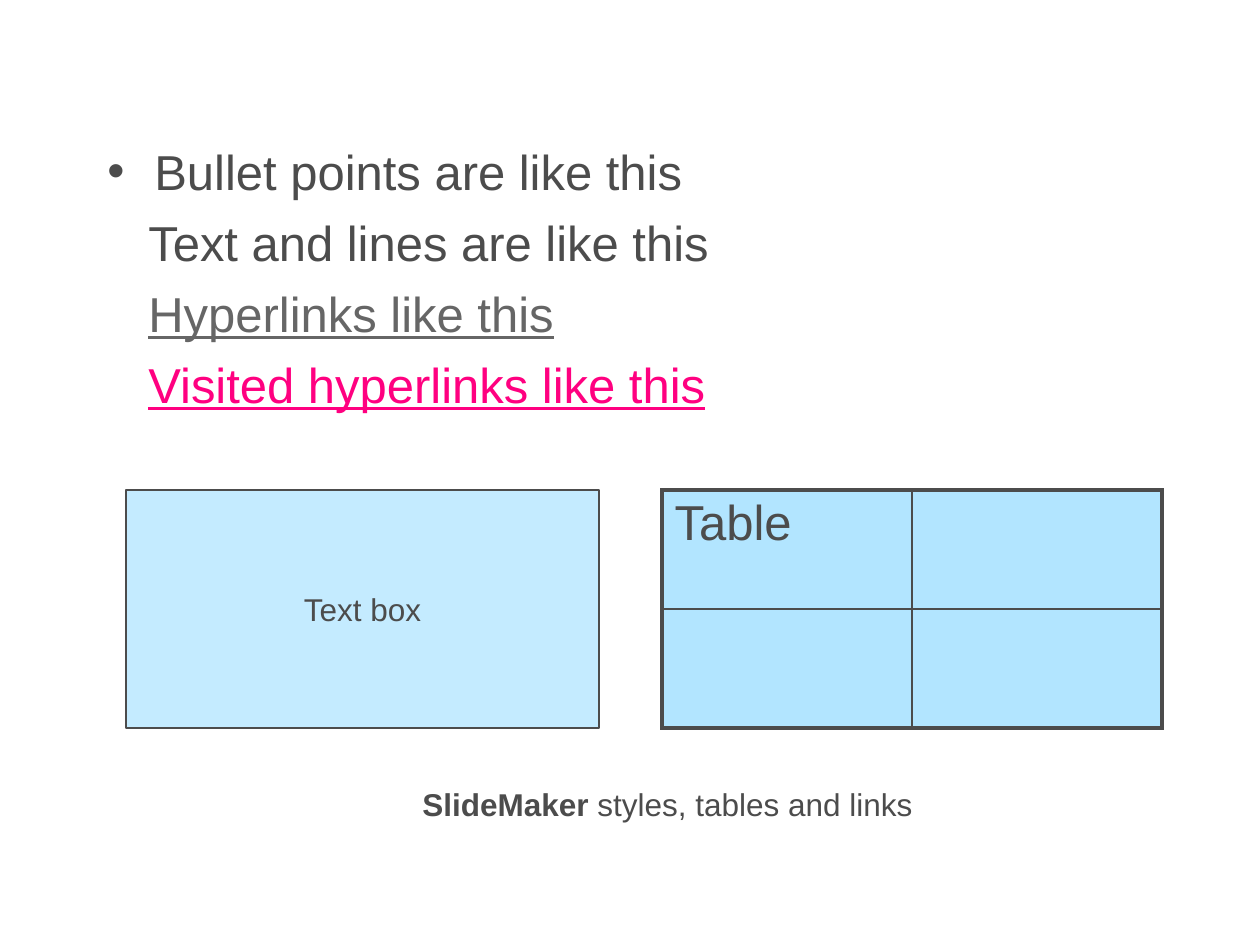
from pptx import Presentation, util as u
from pptx.dml import color
from pptx.enum import shapes, text
from pptx.oxml import xmlchemy, ns
from lxml import etree

COLORS = {"ink": "4C4C4C", "link": "666666", "visited": "FF0080", "panel": "66CCFF"}
EMU_PER_PX = 914400 / 126


def px(*lengths):
    return [u.Emu(round(length * EMU_PER_PX)) for length in lengths]


def set_fill(item, percent):
    item.fill.solid()
    item.fill.fore_color.rgb = color.RGBColor.from_string(COLORS["panel"])
    rgb = item.fill._xPr.find(".//" + ns.qn("a:srgbClr"))
    etree.SubElement(rgb, ns.qn("a:alpha"), val=str(percent * 1000))


presentation = Presentation()
presentation.slide_width, presentation.slide_height = px(1260, 945)
slide = presentation.slides.add_slide(presentation.slide_layouts[6])
ink = color.RGBColor.from_string(COLORS["ink"])

samples = [
    ("Bullet points are like this", "ink", False),
    ("Text and lines are like this", "ink", False),
    ("Hyperlinks like this", "link", True),
    ("Visited hyperlinks like this", "visited", True),
]
body = slide.shapes.add_textbox(*px(95, 135, 683, 506)).text_frame
body.word_wrap = True
for index, (words, name, underline) in enumerate(samples):
    paragraph = body.paragraphs[0] if index == 0 else body.add_paragraph()
    paragraph.text = words
    properties = paragraph._p.get_or_add_pPr()
    margin, indent = px(41, 0) if index else px(47, -47)
    properties.set("marL", str(margin))
    properties.set("indent", str(indent))
    if index:
        etree.SubElement(properties, ns.qn("a:buNone"))
        paragraph.space_before = u.Pt(7)
    else:
        etree.SubElement(properties, ns.qn("a:buFont"), typeface="Arial")
        etree.SubElement(properties, ns.qn("a:buChar"), char="•")
    paragraph.font.name = "Arial"
    paragraph.font.size = u.Pt(28)
    paragraph.font.underline = underline
    paragraph.font.color.rgb = color.RGBColor.from_string(COLORS[name])

table = slide.shapes.add_table(2, 2, *px(662, 490, 500, 238)).table
table.first_row = table.horz_banding = False
for row in range(2):
    for column in range(2):
        cell = table.cell(row, column)
        set_fill(cell, 50)
        outer = {"lnL": column == 0, "lnR": column == 1, "lnT": row == 0, "lnB": row == 1}
        for position, (side, is_outer) in enumerate(outer.items()):
            width = u.Pt(2.25 if is_outer else 1)
            border = etree.Element(ns.qn("a:" + side), w=str(width))
            solid = etree.SubElement(border, ns.qn("a:solidFill"))
            etree.SubElement(solid, ns.qn("a:srgbClr"), val=COLORS["ink"])
            cell._tc.get_or_add_tcPr().insert(position, border)
table.cell(0, 0).text = "Table"
paragraph = table.cell(0, 0).text_frame.paragraphs[0]
paragraph.font.name = "Arial"
paragraph.font.size = u.Pt(28)
paragraph.font.color.rgb = ink

box = slide.shapes.add_shape(shapes.MSO_SHAPE.RECTANGLE, *px(126, 490, 473, 238))
box.shadow.inherit = False
set_fill(box, 38)
box.line.color.rgb = ink
box.line.width = u.Pt(0.75)
box.text_frame.text = "Text box"
box.text_frame.vertical_anchor = text.MSO_ANCHOR.MIDDLE
box.text_frame.word_wrap = False
paragraph = box.text_frame.paragraphs[0]
paragraph.alignment = text.PP_ALIGN.CENTER
paragraph.font.name = "Arial"
paragraph.font.size = u.Pt(18)
paragraph.font.color.rgb = ink

caption = slide.shapes.add_textbox(*px(410, 779, 523, 50)).text_frame
caption.word_wrap = True
paragraph = caption.paragraphs[0]
for words, bold in [("SlideMaker", True), (" styles, tables and links", False)]:
    run = paragraph.add_run()
    run.text = words
    run.font.bold = bold
paragraph.font.name = "Arial"
paragraph.font.size = u.Pt(18)
paragraph.font.color.rgb = ink

presentation.save("out.pptx")
